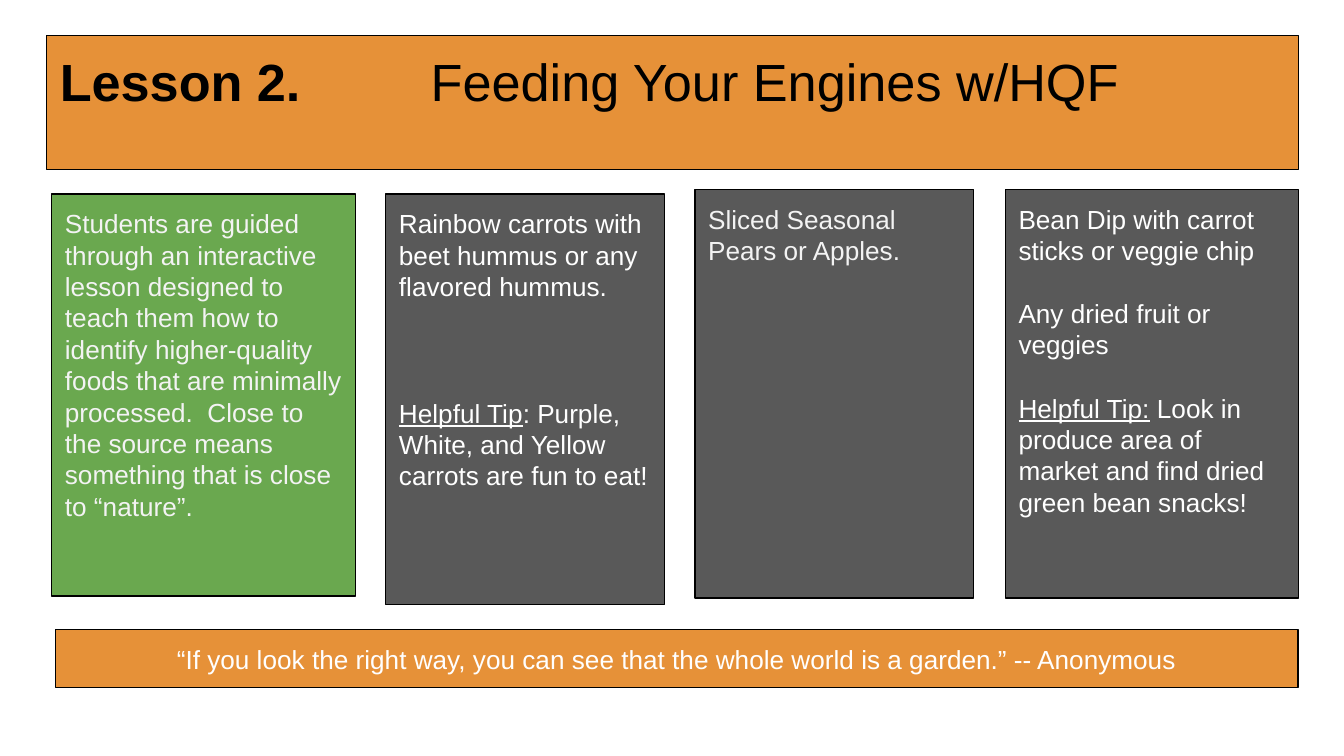
"""Build the Lesson 2 slide: a title bar, four snack panels and a quotation bar."""
from dataclasses import dataclass

from lxml import etree
from pptx import Presentation
from pptx.dml.color import RGBColor
from pptx.enum.shapes import MSO_SHAPE
from pptx.enum.text import MSO_ANCHOR, MSO_AUTO_SIZE, PP_ALIGN
from pptx.oxml.ns import qn
from pptx.util import Emu, Pt

RECTANGLE = MSO_SHAPE.RECTANGLE
TOP = MSO_ANCHOR.TOP
NO_AUTOFIT = MSO_AUTO_SIZE.NONE
LEFT, CENTER = PP_ALIGN.LEFT, PP_ALIGN.CENTER

EMU_PER_PX = 4572
SLIDE_WIDTH, SLIDE_HEIGHT = 2000, 1125
TITLE_ONLY_LAYOUT = 5
INSET = 20
TITLE_TAB = 552
BLANK_LINE = 17
ORANGE, GREEN, GRAY = "E69138", "6AA84F", "595959"
BLACK, WHITE, PALE = "000000", "FFFFFF", "F3F3F3"


@dataclass(frozen=True)
class Span:
    """A stretch of text with its own emphasis."""
    text: str
    bold: bool = False
    underline: bool = False


@dataclass(frozen=True)
class Para:
    """A paragraph with its spans and the space above it in points."""
    spans: tuple[Span, ...]
    space_before: int = 0


@dataclass(frozen=True)
class Panel:
    """A filled, outlined box of text, measured in px."""
    left: int
    top: int
    width: int
    height: int
    fill: str
    color: str
    paras: tuple[Para, ...]
    size: int = 14
    align: PP_ALIGN = LEFT


def plain(text: str, space_before: int = 0) -> Para:
    """Return a paragraph of one unemphasised span."""
    return Para((Span(text),), space_before)


def tip(label: str, text: str, space_before: int) -> Para:
    """Return a paragraph that opens with an underlined label."""
    return Para((Span(label, underline=True), Span(text)), space_before)


TITLE = Panel(69, 53, 1863, 199, ORANGE, BLACK, (
    Para((Span("Lesson 2.", bold=True), Span("\tFeeding Your Engines w/HQF"))),
), size=28)

PANELS = (
    Panel(77, 289, 452, 598, GREEN, PALE, (
        plain("Students are guided through an interactive lesson designed to teach "
              "them how to identify higher-quality foods that are minimally "
              "processed.  Close to the source means something that is close to "
              "“nature”."),
    )),
    Panel(574, 289, 415, 611, GRAY, WHITE, (
        plain("Rainbow carrots with beet hummus or any flavored hummus."),
        tip("Helpful Tip", ": Purple, White, and Yellow carrots are fun to eat!",
            3 * BLANK_LINE),
    )),
    Panel(1034, 282, 415, 608, GRAY, PALE, (
        plain("Sliced Seasonal Pears or Apples."),
    )),
    Panel(1496, 282, 436, 608, GRAY, WHITE, (
        plain("Bean Dip with carrot sticks or veggie chip"),
        plain("Any dried fruit or veggies", BLANK_LINE),
        tip("Helpful Tip:", " Look in produce area of market and find dried green "
            "bean snacks!", BLANK_LINE),
    )),
    Panel(83, 937, 1849, 86, ORANGE, WHITE, (
        plain("“If you look the right way, you can see that the whole world is a "
              "garden.” -- Anonymous"),
    ), align=CENTER),
)


def px(length: int) -> Emu:
    """Turn px into EMU."""
    return Emu(length * EMU_PER_PX)


def rgb(color: str) -> RGBColor:
    """Turn a hex string into a colour."""
    return RGBColor.from_string(color)


def write_paragraph(paragraph, para: Para, panel: Panel) -> None:
    """Write the spans of one paragraph and format them."""
    paragraph.alignment = panel.align
    paragraph.space_before = Pt(para.space_before)
    for span in para.spans:
        run = paragraph.add_run()
        run.text = span.text
        font = run.font
        font.name = "Arial"
        font.size = Pt(panel.size)
        font.bold = span.bold
        font.underline = span.underline
        font.color.rgb = rgb(panel.color)


def style_box(box, panel: Panel) -> None:
    """Place, fill and outline a box and write its text."""
    box.left, box.top = px(panel.left), px(panel.top)
    box.width, box.height = px(panel.width), px(panel.height)
    box.fill.solid()
    box.fill.fore_color.rgb = rgb(panel.fill)
    box.line.color.rgb = rgb(BLACK)
    box.line.width = Pt(0.75)
    frame = box.text_frame
    frame.word_wrap = True
    frame.auto_size = NO_AUTOFIT
    frame.vertical_anchor = TOP
    frame.margin_left = frame.margin_right = px(INSET)
    frame.margin_top = frame.margin_bottom = px(INSET)
    for index, para in enumerate(panel.paras):
        paragraph = frame.add_paragraph() if index else frame.paragraphs[0]
        write_paragraph(paragraph, para, panel)


def add_panel(slide, panel: Panel) -> None:
    """Add a rectangular text panel to the slide."""
    box = slide.shapes.add_shape(RECTANGLE, 0, 0, 0, 0)
    box.shadow.inherit = False
    style_box(box, panel)


def set_tab_stop(paragraph, position: int) -> None:
    """Give a paragraph one left tab stop."""
    properties = paragraph._p.get_or_add_pPr()
    tabs = etree.SubElement(properties, qn("a:tabLst"))
    etree.SubElement(tabs, qn("a:tab"), pos=str(px(position)), algn="l")


def main() -> None:
    """Build and save the deck."""
    deck = Presentation()
    deck.slide_width, deck.slide_height = px(SLIDE_WIDTH), px(SLIDE_HEIGHT)
    slide = deck.slides.add_slide(deck.slide_layouts[TITLE_ONLY_LAYOUT])
    title = slide.shapes.title
    style_box(title, TITLE)
    set_tab_stop(title.text_frame.paragraphs[0], TITLE_TAB)
    for panel in PANELS:
        add_panel(slide, panel)
    deck.save("out.pptx")


if __name__ == "__main__":
    main()
